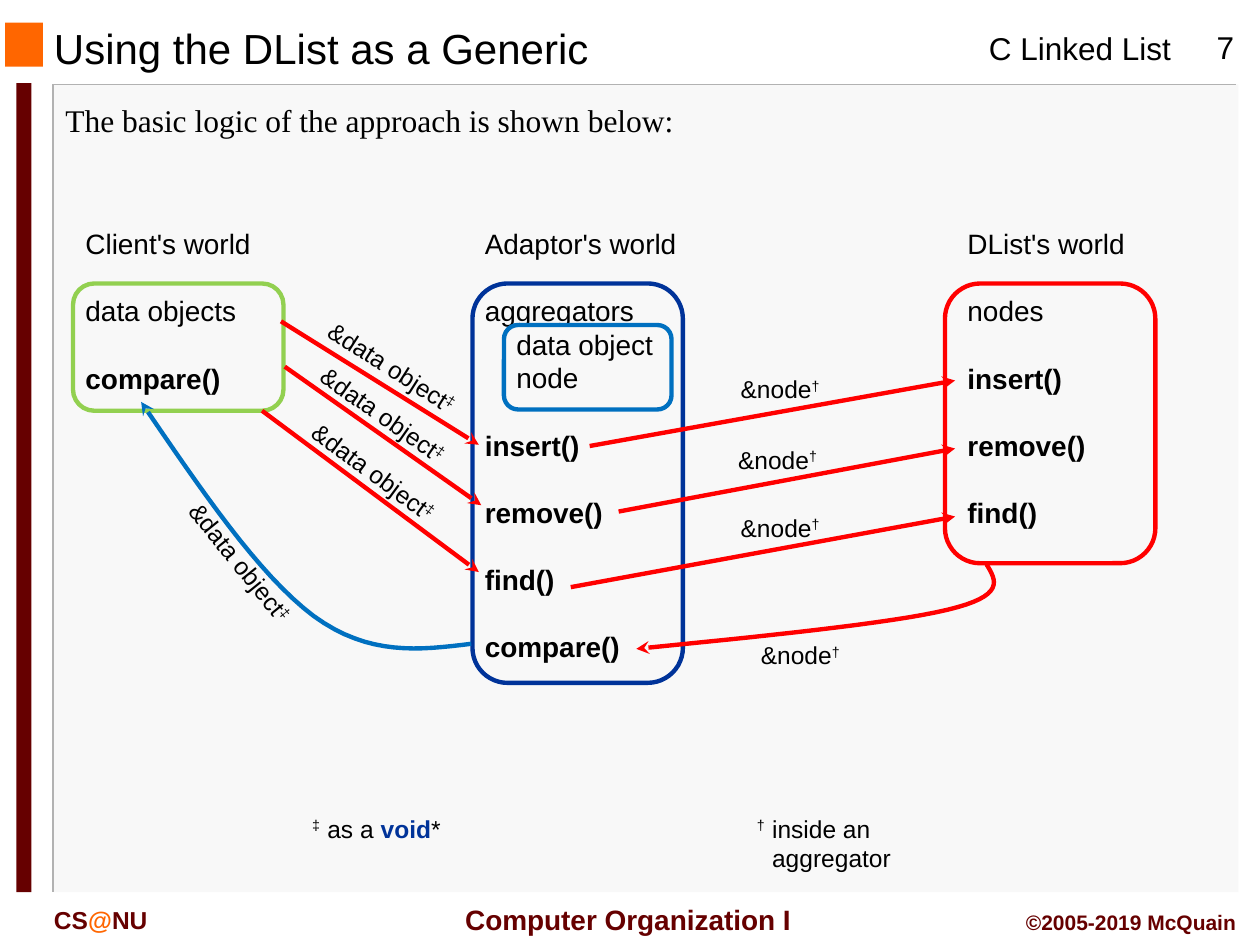
from lxml import etree
from pptx import Presentation
from pptx.dml.color import RGBColor
from pptx.enum.shapes import MSO_CONNECTOR, MSO_SHAPE
from pptx.enum.text import MSO_ANCHOR, PP_ALIGN
from pptx.oxml.ns import qn
from pptx.util import Inches, Pt

STRAIGHT = MSO_CONNECTOR.STRAIGHT
RECT, ROUNDED = MSO_SHAPE.RECTANGLE, MSO_SHAPE.ROUNDED_RECTANGLE
LEFT, CENTER, RIGHT = PP_ALIGN.LEFT, PP_ALIGN.CENTER, PP_ALIGN.RIGHT
TOP, MIDDLE = MSO_ANCHOR.TOP, MSO_ANCHOR.MIDDLE

BLACK, RED, BLUE, NAVY = "000000", "FF0000", "0070C0", "003399"
MAROON, ORANGE = "660000", "FF6600"
LINE_FACTOR = 1.2


def rgb(value):
    return RGBColor.from_string(value)


def add_text(at, runs, size, color=BLACK, bold=False, align=LEFT,
             anchor=TOP, font="Arial", frame=None):
    """Add one paragraph of (text, changes) runs, in a new box or in frame."""
    if frame is None:
        frame = slide.shapes.add_textbox(*map(Inches, at)).text_frame
        frame.word_wrap = True
        frame.vertical_anchor = anchor
        paragraph = frame.paragraphs[0]
    else:
        paragraph = frame.add_paragraph()
    paragraph.alignment = align
    paragraph.line_spacing = Pt(size * LINE_FACTOR)
    paragraph.font.name, paragraph.font.size = font, Pt(size)
    paragraph.font.bold = bold
    paragraph.font.color.rgb = rgb(color)
    for words, changes in runs:
        run = paragraph.add_run()
        run.text = words
        if "color" in changes:
            run.font.color.rgb = rgb(changes["color"])
        if "bold" in changes:
            run.font.bold = changes["bold"]
        if "raised" in changes:
            run.font._element.set("baseline", "30000")
    return paragraph, frame


prs = Presentation()
prs.slide_width, prs.slide_height = Inches(10), Inches(7.5)
slide = prs.slides.add_slide(prs.slide_layouts[6])

# Content panel, title square and side bar
for at, color in [((0.43, 0.67, 9.4, 6.41), "F8F8F8"),
                  ((0.04, 0.18, 0.3, 0.35), ORANGE),
                  ((0.13, 0.66, 0.12, 6.42), MAROON)]:
    block = slide.shapes.add_shape(RECT, *map(Inches, at))
    block.shadow.inherit = False
    block.fill.solid()
    block.fill.fore_color.rgb = rgb(color)
    block.line.fill.background()

# Panel edges: (ends, color, width, has arrowhead), drawn with the arrows below
lines = [((0.42, 0.67, 9.81, 0.67), "B2B2B2", 1, False),
         ((0.42, 0.67, 0.42, 7.08), "B2B2B2", 1, False)]

# Header and footer
add_text((7.75, 0.18, 1.75, 0.4), [("C Linked List", {})], 18)
add_text((9.39, 0.17, 0.67, 0.4), [("7", {})], 18, align=CENTER)
add_text((0.33, 0.19, 6.33, 0.38), [("Using the DList as a Generic", {})], 24,
         anchor=MIDDLE)
add_text((3.53, 7.11, 2.91, 0.37), [("Computer Organization I", {})], 16,
         MAROON, True, CENTER, MIDDLE)
add_text((0.33, 7.13, 1.5, 0.33),
         [("CS", {}), ("@", {"color": ORANGE}), ("NU", {})], 14, MAROON, True)
add_text((7.83, 7.17, 2.08, 0.3), [("©2005-2019 McQuain", {})], 12,
         MAROON, True, RIGHT)
add_text((0.42, 0.75, 9.42, 0.4),
         [("The basic logic of the approach is shown below:", {})], 18,
         font="Times New Roman")

# The three worlds: (left, width, height, entries); functions are bold
worlds = [
    (0.58, 1.75, 1.72, ["Client's world", "data objects", "compare()"]),
    (3.75, 2, 3.87, ["Adaptor's world", "aggregators", "data object", "node",
                     "insert()", "remove()", "find()", "compare()"]),
    (7.58, 1.75, 2.79, ["DList's world", "nodes", "insert()", "remove()",
                        "find()"]),
]
aggregator_members = ("data object", "node")
for left, width, height, entries in worlds:
    frame = None
    for entry in entries:
        first = frame is None
        paragraph, frame = add_text((left, 1.75, width, height), [(entry, {})],
                                    16, bold=entry.endswith("()"), frame=frame)
        if entry in aggregator_members:
            paragraph._p.get_or_add_pPr().set("marL", str(Inches(0.25)))
        elif not first:
            paragraph.space_before = Pt(16 * LINE_FACTOR)

# World outlines
for at, color in [((0.58, 2.25, 1.67, 1.01), "92D050"),
                  ((4, 2.58, 1.33, 0.67), BLUE),
                  ((3.75, 2.25, 1.67, 3.17), NAVY),
                  ((7.5, 2.25, 1.67, 2.22), RED)]:
    outline = slide.shapes.add_shape(ROUNDED, *map(Inches, at))
    outline.shadow.inherit = False
    outline.fill.background()
    outline.line.color.rgb = rgb(color)
    outline.line.width = Pt(2.5)

# Calls from client to adaptor and from adaptor to list
calls = [(2.23, 2.55, 3.8, 3.53), (2.26, 2.91, 3.82, 4.01),
         (2.08, 3.26, 3.8, 4.54), (4.68, 3.54, 7.58, 3.02),
         (4.91, 4.06, 7.58, 3.56), (4.53, 4.66, 7.58, 4.1)]
lines += [(ends, RED, 2.5, True) for ends in calls]
arrows = []
for ends, color, width, has_head in lines:
    line = slide.shapes.add_connector(STRAIGHT, *map(Inches, ends))
    line.line.color.rgb = rgb(color)
    line.line.width = Pt(width)
    etree.SubElement(line._element.spPr, qn("a:effectLst"))
    if has_head:
        arrows.append(line)

# Curved callbacks to compare(), as chains of cubic Bezier pieces
callbacks = [
    (RED, [(7.83, 4.48), (7.91, 4.61), (7.98, 4.73), (7.52, 4.84),
           (7.06, 4.95), (6.05, 5.05), (5.05, 5.15)]),
    (BLUE, [(3.74, 5.11), (3.33, 5.16), (2.93, 5.21), (2.49, 4.89),
            (2.05, 4.56), (1.59, 3.88), (1.12, 3.19)]),
]
STEPS = 16
for color, controls in callbacks:
    points = []
    for start in range(0, len(controls) - 1, 3):
        piece = controls[start:start + 4]
        for step in range(1, STEPS + 1):
            t = step / STEPS
            weights = ((1 - t)**3, 3 * t * (1 - t)**2, 3 * t**2 * (1 - t), t**3)
            points.append([Inches(sum(w * p[axis] for w, p in zip(weights, piece)))
                           for axis in (0, 1)])
    builder = slide.shapes.build_freeform(*map(Inches, controls[0]))
    builder.add_line_segments(points, close=False)
    callback = builder.convert_to_shape()
    callback.shadow.inherit = False
    callback.fill.background()
    callback.line.color.rgb = rgb(color)
    callback.line.width = Pt(2.5)
    arrows.append(callback)

# Arrowheads
for arrow in arrows:
    etree.SubElement(arrow.line._get_or_add_ln(), qn("a:tailEnd"), type="stealth")

# Arrow labels: (left, top, width, rotation)
labels = {
    ("&data object", "‡"): [(2.43, 2.77, 1.43, 32.5), (2.36, 3.14, 1.41, 35),
                            (2.28, 3.61, 1.46, 36.4), (1.22, 4.32, 1.41, 51)],
    ("&node", "†"): [(5.78, 2.92, 1, 0), (5.76, 3.48, 1, 0),
                     (5.78, 4.02, 1, 0), (5.94, 5.03, 1, 0)],
}
for (argument, mark), places in labels.items():
    for left, top, width, rotation in places:
        _, frame = add_text((left, top, width, 0.34),
                            [(argument, {}), (mark, {"raised": True})], 14)
        frame._parent.rotation = rotation

# Footnotes with a hanging mark
for left, height, mark, note in [
        (5.91, 0.57, "†", [("inside an aggregator", {})]),
        (2.38, 0.34, "‡", [("as a ", {}),
                           ("void", {"color": NAVY, "bold": True}), ("*", {})])]:
    paragraph, _ = add_text((left, 6.41, 1.36, height),
                            [(mark + "\t", {"raised": True})] + note, 14)
    properties = paragraph._p.get_or_add_pPr()
    properties.set("marL", str(Inches(0.12)))
    properties.set("indent", str(-Inches(0.12)))

prs.save("out.pptx")
